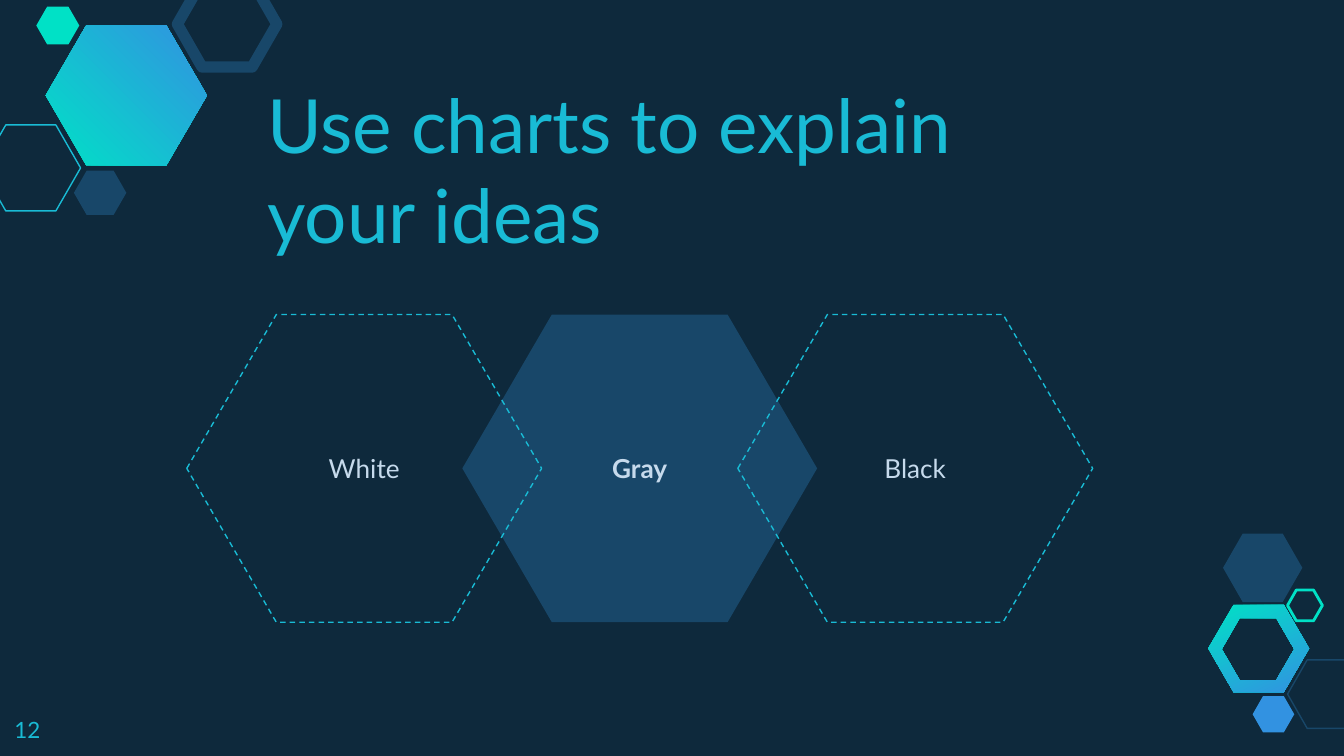
from dataclasses import dataclass

from pptx import Presentation
from pptx import util as u
from pptx.dml.color import RGBColor
from pptx.enum import dml, shapes, text


@dataclass(frozen=True)
class Theme:
    font: str = "Lato"
    night: str = "0E293C"
    navy: str = "184769"
    cyan: str = "19BBD5"
    mint: str = "00E1C6"
    blue: str = "3292E1"
    pale: str = "C6DAEC"
    title_size: int = 40
    label_size: int = 14
    number_size: int = 12


CELL = u.Inches(0.1)  # the grid has 100 columns
DECOR_SLANT = 0.287
DIAGRAM_SLANT = 0.291


class SlideBuilder:
    """Draws on one slide; lengths are (column, row, columns, rows)."""

    def __init__(self, deck, theme):
        self.theme = theme
        self.slide = deck.slides.add_slide(deck.slide_layouts[5])
        background = self.slide.background.fill
        background.solid()
        background.fore_color.rgb = RGBColor.from_string(theme.night)

    def place(self, area):
        return [int(length * CELL) for length in area]

    def set_text(self, box, words, size, color, align=text.PP_ALIGN.LEFT,
                 anchor=text.MSO_ANCHOR.TOP, bold=False):
        frame = box.text_frame
        frame.word_wrap = True
        frame.auto_size = text.MSO_AUTO_SIZE.NONE
        frame.vertical_anchor = anchor
        frame.margin_left = frame.margin_right = CELL
        frame.margin_top = frame.margin_bottom = CELL
        para = frame.paragraphs[0]
        para.text = words
        para.alignment = align
        font = para.font
        font.name, font.size, font.bold = self.theme.font, u.Pt(size), bold
        font.color.rgb = RGBColor.from_string(color)

    def title(self, area, words):
        box = self.slide.shapes.title
        box.left, box.top, box.width, box.height = self.place(area)
        self.set_text(box, words, self.theme.title_size, self.theme.cyan,
                      anchor=text.MSO_ANCHOR.BOTTOM)

    def number(self, area, words):
        box = self.slide.shapes.add_textbox(*self.place(area))
        self.set_text(box, words, self.theme.number_size, self.theme.cyan)

    def hexagon(self, area, fill=None, line=None, weight=0.75, dashed=False,
                slant=DECOR_SLANT):
        shape = self.slide.shapes.add_shape(
            shapes.MSO_SHAPE.HEXAGON, *self.place(area))
        shape.adjustments[0] = slant
        shape.shadow.inherit = False
        if fill:
            shape.fill.solid()
            shape.fill.fore_color.rgb = RGBColor.from_string(fill)
        else:
            shape.fill.background()
        if line:
            shape.line.color.rgb = RGBColor.from_string(line)
            shape.line.width = u.Pt(weight)
            if dashed:
                shape.line.dash_style = dml.MSO_LINE.DASH
        else:
            shape.line.fill.background()
        return shape

    def labelled_hexagon(self, area, words, bold=False, **look):
        shape = self.hexagon(area, slant=DIAGRAM_SLANT, **look)
        self.set_text(shape, words, self.theme.label_size, self.theme.pale,
                      text.PP_ALIGN.CENTER, text.MSO_ANCHOR.MIDDLE, bold)

    def corners(self, area):
        left, top, width, height = self.place(area)
        inset = int(height * 0.29)
        right, bottom, middle = left + width, top + height, top + height // 2
        return [(left, middle), (left + inset, top), (right - inset, top),
                (right, middle), (right - inset, bottom), (left + inset, bottom)]

    def gradient_hexagon(self, area, angle, hole=None):
        points = self.corners(area)
        builder = self.slide.shapes.build_freeform(*points[0])
        builder.add_line_segments(points[1:])
        if hole:
            inner = self.corners(hole)[::-1]
            builder.move_to(*inner[0])
            builder.add_line_segments(inner[1:])
        shape = builder.convert_to_shape()
        shape.shadow.inherit = False
        shape.line.fill.background()
        shape.fill.gradient()
        shape.fill.gradient_angle = angle
        colors = (self.theme.mint, self.theme.blue)
        for stop, color, position in zip(shape.fill.gradient_stops, colors, (0, 1)):
            stop.color.rgb = RGBColor.from_string(color)
            stop.position = position


def main():
    theme = Theme()
    deck = Presentation()
    deck.slide_width = u.Inches(10)
    deck.slide_height = deck.slide_width * 9 // 16
    page = SlideBuilder(deck, theme)

    # Gradient hexagons in the two corners
    page.gradient_hexagon((89.9, 45, 7.5, 6.5), 296, hole=(90.9, 46, 5.4, 4.6))
    page.gradient_hexagon((3.4, 1.9, 12, 10.4), 45)

    # Top-left cluster
    page.hexagon((-1.4, 9.3, 7.4, 6.4), line=theme.cyan)
    page.hexagon((5.5, 12.7, 3.9, 3.3), fill=theme.navy)
    page.hexagon((13.2, -1.4, 7.4, 6.4), line=theme.navy, weight=6)
    page.hexagon((2.7, 0.5, 3.2, 2.8), fill=theme.mint)

    # Bottom-right cluster
    page.hexagon((95.8, 49.1, 5.9, 5.1), line=theme.navy)
    page.hexagon((93.2, 51.8, 3.1, 2.7), fill=theme.blue)
    page.hexagon((91, 39.7, 5.9, 5.1), fill=theme.navy)
    page.hexagon((95.8, 43.9, 2.6, 2.3), line=theme.mint, weight=1.5)

    # Overlapping diagram: the filled middle lies under its neighbours
    first, step = 13.9, 20.5
    outlined = {"line": theme.cyan, "dashed": True}
    for index, words, bold, look in (
        (1, "Gray", True, {"fill": theme.navy}),
        (0, "White", False, outlined),
        (2, "Black", False, outlined),
    ):
        page.labelled_hexagon((first + index * step, 23.4, 26.4, 22.9),
                              words, bold, **look)

    # Title and page number
    page.title((18.9, 13.1, 54.1, 7.1), "Use charts to explain your ideas")
    page.number((0.1, 52.3, 6, 3.9), "12")

    deck.save("out.pptx")


if __name__ == "__main__":
    main()
